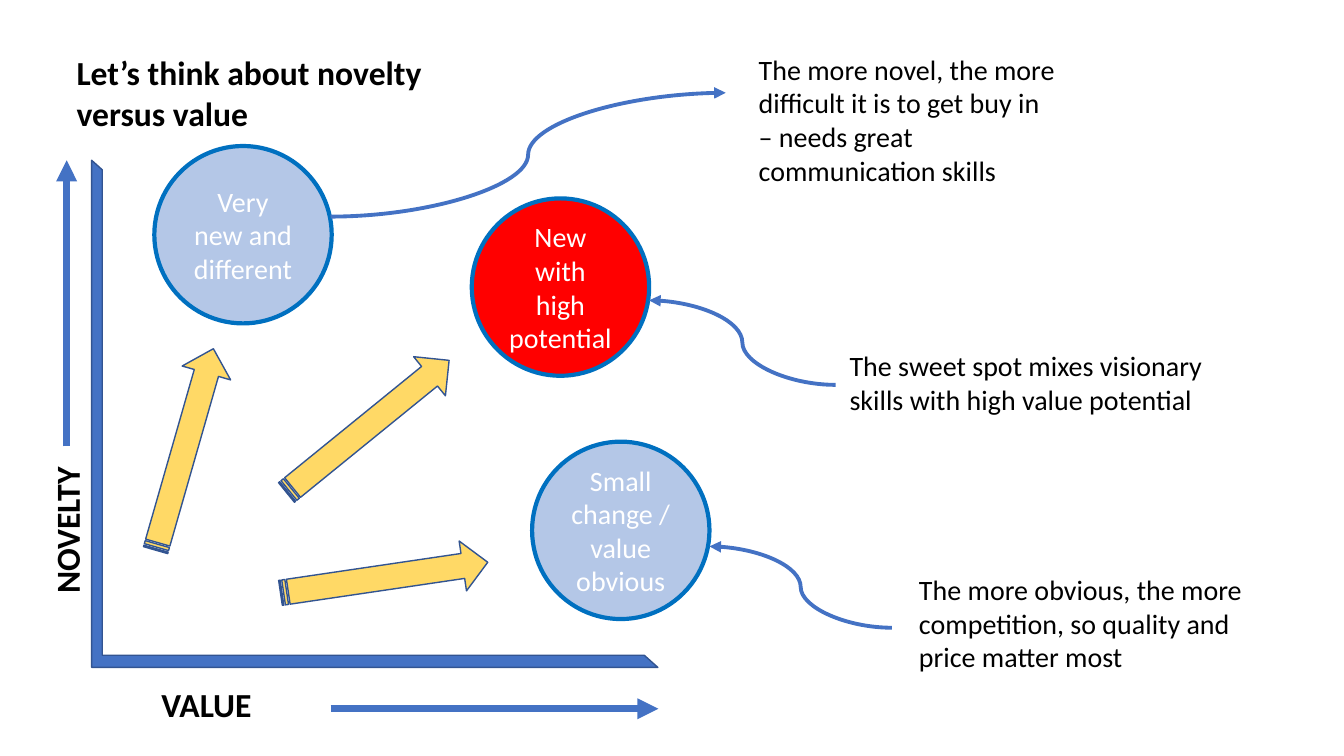
from lxml.etree import SubElement
from pptx import Presentation
from pptx.dml.color import RGBColor as Rgb
from pptx.enum.shapes import MSO_CONNECTOR as Link, MSO_SHAPE as Shape
from pptx.enum.text import MSO_ANCHOR as Anchor, MSO_AUTO_SIZE as AutoSize, PP_ALIGN as Align
from pptx.oxml.ns import qn
from pptx.util import Cm, Pt

COLORS = {
    "axis": "4472C4", "outline": "325491", "ring": "0070C0", "idea": "B4C7E7",
    "sweet_spot": "FF0000", "arrow": "FFD966", "ink": "000000", "white": "FFFFFF",
}


def apply(target, values):
    for key, value in values.items():
        setattr(target, key, value)


class Board:
    """Holds the style and the current slide."""

    font = "Calibri"
    heading = {"size": Pt(24), "bold": True}
    body = {"size": Pt(20)}

    def __init__(self, slide):
        self.shapes = slide.shapes

    def color(self, name):
        return Rgb.from_string(COLORS[name])

    def fill_text(self, frame, lines, style, color, align):
        frame.word_wrap = True
        for number, line in enumerate(lines):
            paragraph = frame.add_paragraph() if number else frame.paragraphs[0]
            paragraph.alignment = align
            run = paragraph.add_run()
            run.text = line
            apply(run.font, {"name": self.font, **style})
            run.font.color.rgb = self.color(color)

    def text(self, box, lines, style=body, align=Align.LEFT, rotation=0):
        label = self.shapes.add_textbox(*map(Cm, box))
        label.rotation = rotation
        self.fill_text(label.text_frame, lines, style, "ink", align)
        label.text_frame.auto_size = AutoSize.SHAPE_TO_FIT_TEXT

    def shape(self, kind, box, fill, line="outline", width=1, rotation=0):
        figure = self.shapes.add_shape(kind, *map(Cm, box))
        figure.shadow.inherit = False
        figure.rotation = rotation
        figure.fill.solid()
        figure.fill.fore_color.rgb = self.color(fill)
        figure.line.color.rgb = self.color(line)
        figure.line.width = Pt(width)
        return figure

    def axes(self, box):
        frame = self.shape(Shape.HALF_FRAME, box, "axis")
        frame.adjustments[0], frame.adjustments[1] = 0.024, 0.021
        frame.element.spPr.find(qn("a:xfrm")).set("flipV", "1")

    def circle(self, left, top, words, fill):
        size = 4.47
        idea = self.shape(Shape.OVAL, (left, top, size, size), fill, "ring", 3)
        idea.text_frame.vertical_anchor = Anchor.MIDDLE
        self.fill_text(idea.text_frame, [words], self.body, "white", Align.CENTER)

    def pointer(self, kind, start, end, width):
        link = self.shapes.add_connector(kind, *map(Cm, start + end))
        link.line.color.rgb = self.color("axis")
        link.line.width = Pt(width)
        properties = link.element.spPr
        SubElement(properties.find(qn("a:ln")), qn("a:tailEnd"), type="triangle")
        SubElement(properties, qn("a:effectLst"))


def main():
    deck = Presentation()
    apply(deck, {"slide_width": Cm(33.87), "slide_height": Cm(19.05)})
    board = Board(deck.slides.add_slide(deck.slide_layouts[6]))

    # Title
    board.text((1.68, 1.19, 19.38, 2.31),
               ["Let’s think about novelty", "versus value"], board.heading)

    # Axes with their names and directions
    board.axes((2.31, 4.04, 14.27, 12.78))
    board.text((-1.78, 12.73, 6.91, 1.27), ["NOVELTY"], board.heading, Align.CENTER, 270)
    board.text((1.04, 17.12, 8.33, 1.27), ["VALUE"], board.heading, Align.CENTER)
    for start, end in [((1.68, 11.25), (1.68, 4.04)), ((8.33, 17.86), (16.59, 17.86))]:
        board.pointer(Link.STRAIGHT, start, end, 5)

    # Kinds of ideas
    for idea in [
        (3.89, 3.68, "Very new and different", "idea"),
        (13.41, 11.13, "Small change / value obvious", "idea"),
        (11.89, 5, "New with high potential", "sweet_spot"),
    ]:
        board.circle(*idea)

    # Remarks and the curves that tie them to the ideas
    for box, remark, start, end in [
        ((18.87, 1.19, 8.08, 3.68),
         "The more novel, the more difficult it is to get buy in "
         "– needs great communication skills",
         (8.33, 5.46), (18.29, 2.34)),
        ((22.91, 14.3, 9.55, 2.82),
         "The more obvious, the more competition, so quality and price matter most",
         (22.48, 15.82), (17.88, 13.77)),
        ((21.16, 8.66, 9.55, 1.96),
         "The sweet spot mixes visionary skills with high value potential",
         (21.06, 9.7), (16.36, 7.57)),
    ]:
        board.text(box, [remark])
        board.pointer(Link.CURVE, start, end, 2.75)

    # Striped arrows from the origin towards the ideas
    for left, top, angle in [(2.01, 10.69, 286), (7.04, 13.92, 351.6), (6.63, 10.11, 320.9)]:
        board.shape(Shape.STRIPED_RIGHT_ARROW, (left, top, 5.28, 1.27), "arrow", rotation=angle)

    deck.save("out.pptx")


if __name__ == "__main__":
    main()
